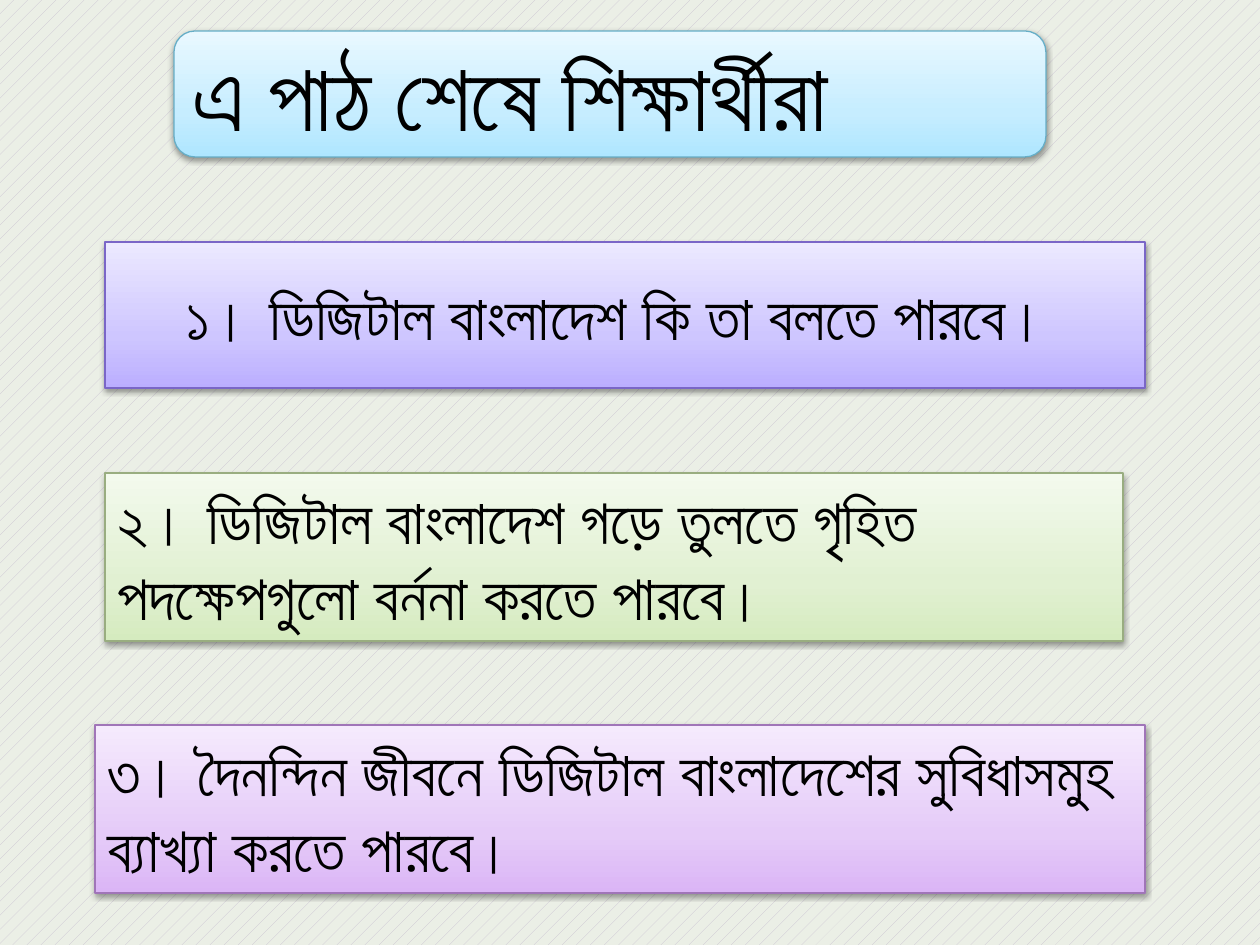
from copy import deepcopy

from lxml import etree
from pptx import Presentation
from pptx.dml.color import RGBColor
from pptx.enum.dml import MSO_PATTERN
from pptx.enum.shapes import MSO_SHAPE
from pptx.enum.text import MSO_ANCHOR, PP_ALIGN
from pptx.oxml.ns import qn
from pptx.util import Emu, Pt

PX = 914400 / 126
RECT, ROUND_RECT = MSO_SHAPE.RECTANGLE, MSO_SHAPE.ROUNDED_RECTANGLE
LEFT, CENTER = PP_ALIGN.LEFT, PP_ALIGN.CENTER
MIDDLE = MSO_ANCHOR.MIDDLE
DOTS = MSO_PATTERN.PERCENT_10

BLACK = RGBColor(0x00, 0x00, 0x00)
BG_DOT = RGBColor(0xC9, 0xC2, 0xD1)
BG_BASE = RGBColor(0xEB, 0xEF, 0xE6)
# Each palette: line colour, then gradient colours from bottom to top
BLUE = (RGBColor(0x66, 0xAE, 0xC7), RGBColor(0xAE, 0xE6, 0xFF),
        RGBColor(0xC6, 0xED, 0xFF), RGBColor(0xE9, 0xF8, 0xFF))
VIOLET = (RGBColor(0x7A, 0x66, 0xC7), RGBColor(0xBB, 0xAE, 0xFF),
          RGBColor(0xCE, 0xC6, 0xFF), RGBColor(0xEC, 0xE9, 0xFF))
GREEN = (RGBColor(0x99, 0xAD, 0x80), RGBColor(0xD5, 0xEB, 0xBF),
         RGBColor(0xE1, 0xF0, 0xD2), RGBColor(0xF3, 0xFA, 0xED))
PURPLE = (RGBColor(0xA0, 0x75, 0xB8), RGBColor(0xDB, 0xB5, 0xF6),
          RGBColor(0xE5, 0xCB, 0xF8), RGBColor(0xF5, 0xEA, 0xFD))
STOPS = (0, 0.35, 1)


def px(n):
    return Emu(round(n * PX))


class Deck:
    """Holds the text style and the current slide."""

    font = {"name": "Lato"}

    def __init__(self, width, height):
        self.prs = Presentation()
        self.prs.slide_width, self.prs.slide_height = px(width), px(height)
        self.s = self.prs.slides.add_slide(self.prs.slide_layouts[6])

    def background(self, fore, back):
        fill = self.s.background.fill
        fill.patterned()
        fill.pattern = DOTS
        fill.fore_color.rgb, fill.back_color.rgb = fore, back

    def gradient(self, sp, colors):
        sp.fill.gradient()
        sp.fill.gradient_angle = 90
        stop_list = next(sp._element.spPr.iter(qn("a:gsLst")))
        stop_list.append(deepcopy(stop_list[0]))
        for stop, position, color in zip(sp.fill.gradient_stops, STOPS, colors):
            stop.position, stop.color.rgb = position, color

    def shadow(self, sp):
        sp.shadow.inherit = False
        effects = sp._element.spPr.find(qn("a:effectLst"))
        outer = etree.SubElement(effects, qn("a:outerShdw"), blurRad="40000",
                                 dist="20000", dir="5400000", rotWithShape="0")
        color = etree.SubElement(outer, qn("a:srgbClr"), val=str(BLACK))
        etree.SubElement(color, qn("a:alpha"), val="38000")

    def box(self, shape, at, palette, text, size=36, align=LEFT):
        sp = self.s.shapes.add_shape(shape, *map(px, at))
        line_color, *colors = palette
        self.gradient(sp, colors)
        sp.line.color.rgb, sp.line.width = line_color, Pt(0.75)
        self.shadow(sp)
        tf = sp.text_frame
        tf.word_wrap, tf.vertical_anchor = True, MIDDLE
        p = tf.paragraphs[0]
        p.alignment = align
        r = p.add_run()
        r.text = text
        for key, value in {**self.font, "size": Pt(size)}.items():
            setattr(r.font, key, value)
        r.font.color.rgb = BLACK


def main():
    deck = Deck(1260, 945)
    deck.background(BG_DOT, BG_BASE)
    deck.box(ROUND_RECT, (174, 31, 872, 126), BLUE,
             "এ পাঠ শেষে শিক্ষার্থীরা", size=54)
    deck.box(RECT, (105, 242, 1040, 146), VIOLET,
             "১। ডিজিটাল বাংলাদেশ কি তা বলতে পারবে। ", align=CENTER)
    deck.box(RECT, (105, 473, 1018, 168), GREEN,
             "২। ডিজিটাল বাংলাদেশ গড়ে তুলতে গৃহিত পদক্ষেপগুলো বর্ননা করতে পারবে।")
    deck.box(RECT, (95, 725, 1050, 168), PURPLE,
             "৩। দৈনন্দিন জীবনে ডিজিটাল বাংলাদেশের সুবিধাসমুহ ব্যাখ্যা করতে পারবে।")
    deck.prs.save("out.pptx")


if __name__ == "__main__":
    main()
